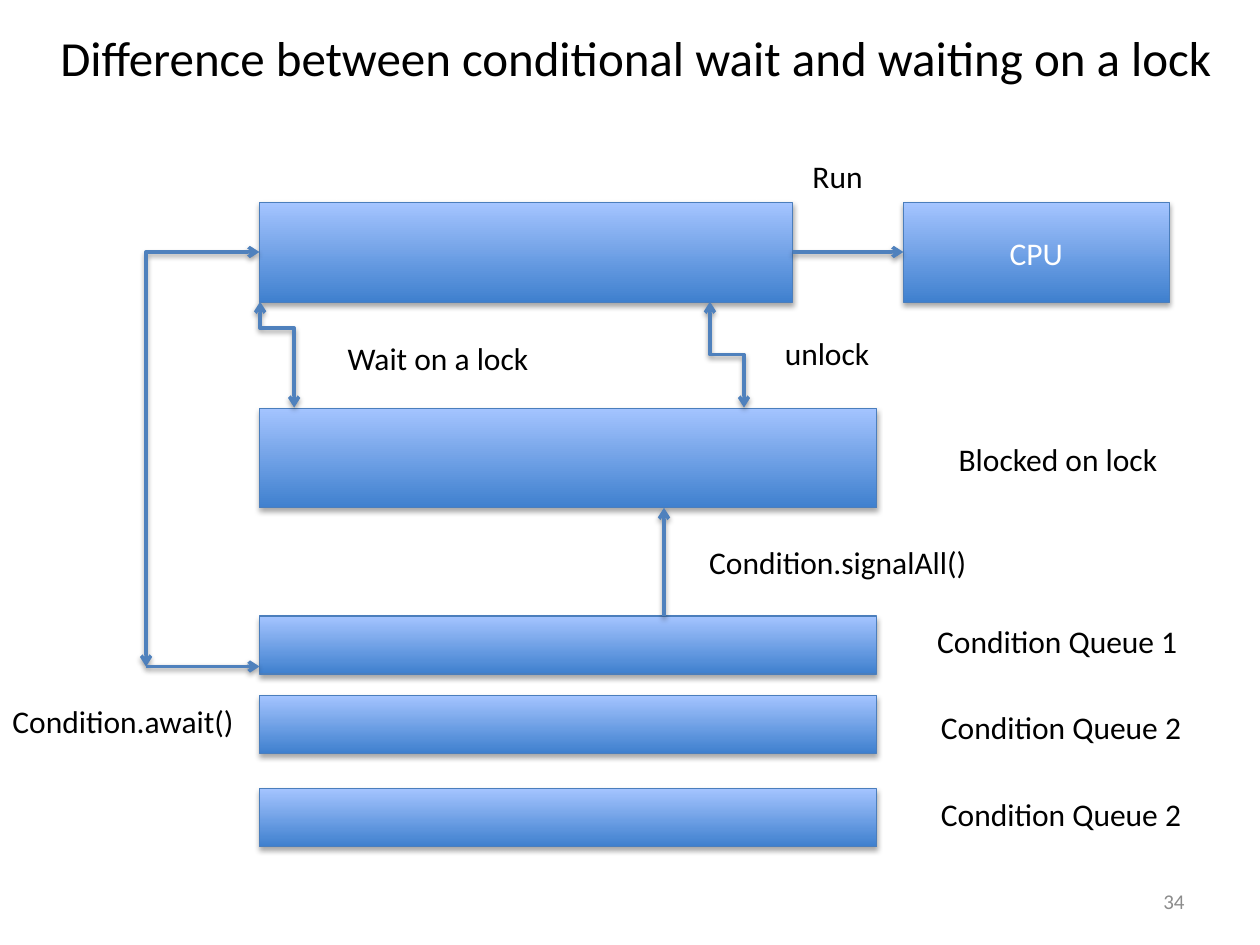
from lxml.etree import SubElement
from pptx import Presentation
from pptx.dml.color import RGBColor
from pptx.enum.shapes import MSO_CONNECTOR, MSO_SHAPE
from pptx.enum.text import MSO_ANCHOR, MSO_AUTO_SIZE, PP_ALIGN
from pptx.oxml.ns import qn
from pptx.util import Inches, Pt

COLORS = {"text": "000000", "number": "8C8C8C", "cpu": "FFFFFF", "arrow": "4F81BD",
          "box_line": "4B7EBC", "box_dark": "3F80CE", "box_light": "A4C4FF",
          "shadow": "000000"}


def write(frame, text, size=18, color="text", align=PP_ALIGN.LEFT, anchor=MSO_ANCHOR.TOP):
    frame.text = text
    frame.vertical_anchor = anchor
    paragraph = frame.paragraphs[0]
    paragraph.alignment = align
    font = paragraph.runs[0].font
    for name, value in {"name": "Calibri", "size": Pt(size)}.items():
        setattr(font, name, value)
    font.color.rgb = RGBColor.from_string(COLORS[color])


def cast_shadow(effects, distance, opacity):
    shadow = SubElement(effects, qn("a:outerShdw"), blurRad=str(Pt(3.1)),
                        dist=str(Pt(distance)), dir="5400000", rotWithShape="0")
    color = SubElement(shadow, qn("a:srgbClr"), val=COLORS["shadow"])
    SubElement(color, qn("a:alpha"), val=str(opacity * 1000))


prs = Presentation()
prs.slide_width, prs.slide_height = Inches(10), Inches(7.5)
slide = prs.slides.add_slide(prs.slide_layouts[5])

# Title
title = slide.shapes.title
title_place = {"left": 0.19, "top": 0.08, "width": 9.71, "height": 0.75}
for side, length in title_place.items():
    setattr(title, side, Inches(length))
write(title.text_frame, "Difference between conditional wait and waiting on a lock",
      size=28, align=PP_ALIGN.CENTER, anchor=MSO_ANCHOR.MIDDLE)

# Slide number
number = slide.shapes.add_textbox(Inches(7.17), Inches(6.95), Inches(2.33), Inches(0.4))
number.text_frame.word_wrap = True
write(number.text_frame, "34", size=12, color="number",
      align=PP_ALIGN.RIGHT, anchor=MSO_ANCHOR.MIDDLE)

# Queues and the CPU: left, top, width, height, text
queue_left, queue_width = 2.06, 4.9
boxes = [
    (queue_left, 1.61, 4.23, 0.79, ""),
    (queue_left, 3.24, queue_width, 0.79, ""),
    *[(queue_left, top, queue_width, 0.46, "") for top in (4.89, 5.52, 6.26)],
    (7.17, 1.61, 2.11, 0.79, "CPU"),
]
for *place, text in boxes:
    box = slide.shapes.add_shape(MSO_SHAPE.RECTANGLE, *map(Inches, place))
    box.fill.gradient()
    box.fill.gradient_angle = 90
    for stop, shade in zip(box.fill.gradient_stops, ("box_dark", "box_light")):
        stop.color.rgb = RGBColor.from_string(COLORS[shade])
    box.line.color.rgb = RGBColor.from_string(COLORS["box_line"])
    box.line.width = Pt(0.75)
    box.shadow.inherit = False
    cast_shadow(box._element.spPr.find(qn("a:effectLst")), 1.8, 35)
    if text:
        write(box.text_frame, text, color="cpu", align=PP_ALIGN.CENTER,
              anchor=MSO_ANCHOR.MIDDLE)

# Arrows: start x, start y, end x, end y, preset, quarter turns, bend, two heads
# The turned elbows are laid out lying down, before their rotation
arrows = [
    (6.19, 2.68, 5.35, 2.95, "bentConnector3", 3, 0.5, True),
    (2.62, 2.68, 1.78, 2.95, "bentConnector3", 3, 0.25, True),
    (2.06, 2, 1.16, 5.29, "bentConnector2", 0, None, True),
    (1.16, 5.29, 2.06, 5.29, "line", 0, None, False),
    (6.29, 2, 7.17, 2, "line", 0, None, False),
    (5.27, 4.89, 5.27, 4.03, "line", 0, None, False),
]
for *ends, preset, turns, bend, two_heads in arrows:
    kind = MSO_CONNECTOR.STRAIGHT if preset == "line" else MSO_CONNECTOR.ELBOW
    arrow = slide.shapes.add_connector(kind, *map(Inches, ends))
    arrow.line.color.rgb = RGBColor.from_string(COLORS["arrow"])
    arrow.line.width = Pt(2)
    properties = arrow._element.spPr
    geometry = properties.find(qn("a:prstGeom"))
    geometry.set("prst", preset)
    if turns:
        properties.find(qn("a:xfrm")).set("rot", str(turns * 5400000))
    if bend is not None:
        SubElement(geometry.find(qn("a:avLst")), qn("a:gd"), name="adj1",
                   fmla=f"val {round(bend * 100000)}")
    outline = properties.find(qn("a:ln"))
    for tag in ("a:headEnd", "a:tailEnd") if two_heads else ("a:tailEnd",):
        SubElement(outline, qn(tag), type="arrow")
    cast_shadow(SubElement(properties, qn("a:effectLst")), 1.6, 38)

# Labels: left, top, width, text, wrap
labels = [
    (7.34, 4.89, 2.13, "Condition Queue 1", False),
    (7.37, 5.57, 2.13, "Condition Queue 2", False),
    (7.37, 6.26, 2.13, "Condition Queue 2", False),
    (7.51, 3.44, 1.79, "Blocked on lock", False),
    (2.66, 2.64, 1.65, "Wait on a lock", False),
    (6.13, 2.6, 0.88, "unlock", False),
    (6.35, 1.2, 0.6, "Run", False),
    (0, 5.52, 1.98, "Condition.await()", True),
    (5.53, 4.26, 2.41, "Condition.signalAll()", True),
]
for left, top, width, text, wrap in labels:
    label = slide.shapes.add_textbox(Inches(left), Inches(top), Inches(width), Inches(0.4))
    label.text_frame.word_wrap = wrap
    label.text_frame.auto_size = MSO_AUTO_SIZE.SHAPE_TO_FIT_TEXT
    write(label.text_frame, text)

prs.save("out.pptx")
